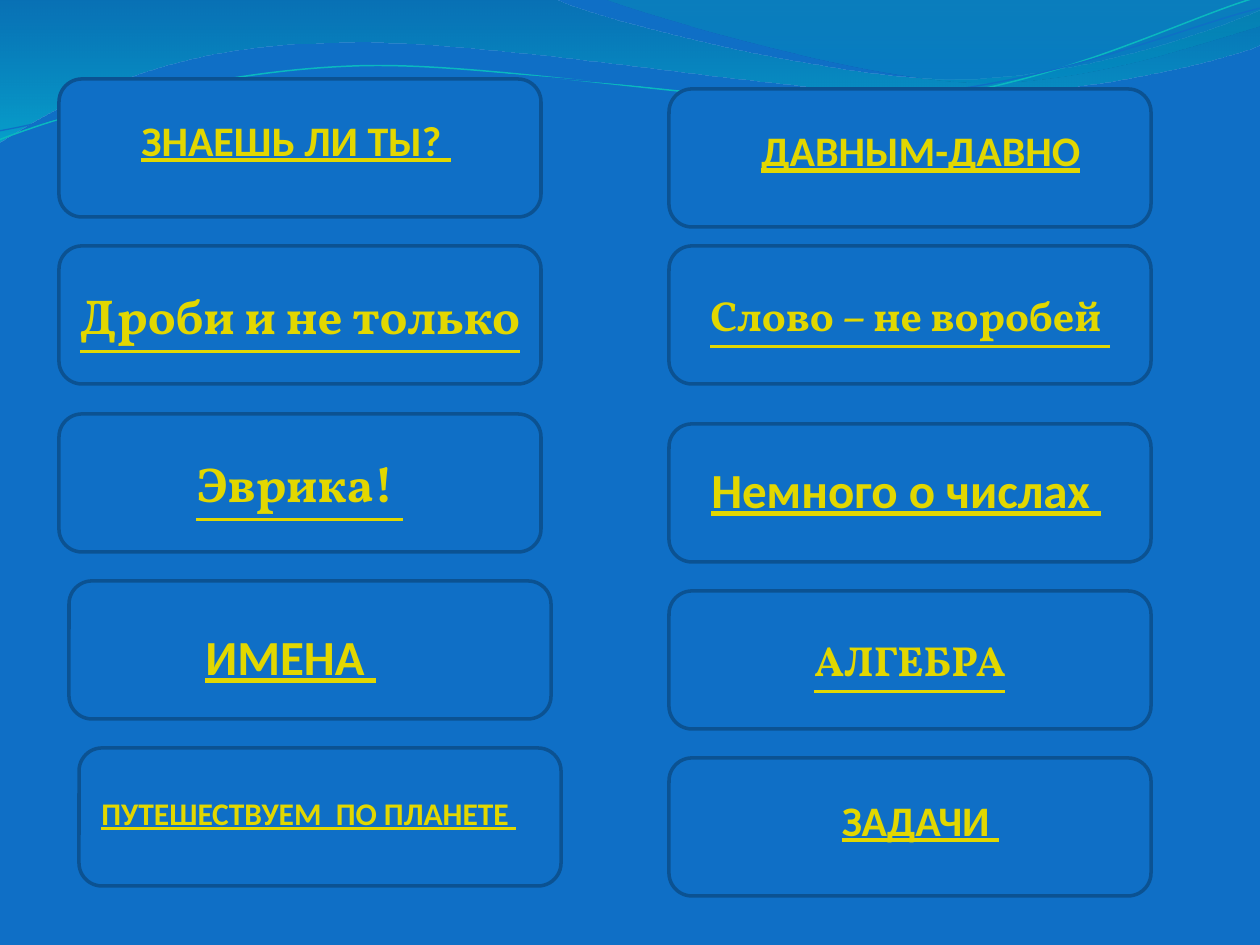
from lxml.etree import SubElement
from pptx import Presentation
from pptx.dml.color import RGBColor
from pptx.enum.shapes import MSO_SHAPE
from pptx.enum.text import MSO_ANCHOR, MSO_AUTO_SIZE, PP_ALIGN
from pptx.oxml.ns import qn
from pptx.util import Pt

SCALE = 914400 / 126  # EMU in one px
BLUE, EDGE, GOLD = "0F6FC6", "0B5292", "E2D700"
SERIF, SANS = "Vollkorn", "Calibri"
MID, LEFT = PP_ALIGN.CENTER, PP_ALIGN.LEFT
CARD = (482, 138)
TILT = 357.3

# Each route: a start, then pieces of one point (line) or three (curve)
WAVES = [
    ([[(0, 0)], [(554, -1)],
      [(600, 21), (837, 79), (955, 79)],
      [(1075, 79), (1207, 33), (1260, 11)],
      [(1261, 45)],
      [(1239, 55), (1096, 96), (940, 95)],
      [(784, 95), (481, 35), (324, 43)],
      [(163, 45), (58, 105), (-1, 142)],
      [(0, 0)]],
     [(0, "0074A1", 45), (1, "00C6CF", 55)]),
    ([[(604, -1)],
      [(641, 14), (859, 78), (969, 82)],
      [(1079, 87), (1211, 40), (1260, 26)],
      [(1260, 0)], [(604, -1)]],
     [(0, "00A1A9", 30), (0.8, "008BBF", 45)]),
]
LINES = [
    ([[(-3, 110)],
      [(58, 90), (200, 52), (350, 53)],
      [(496, 53), (745, 117), (896, 114)],
      [(1049, 109), (1184, 45), (1260, 27)]], "0AB8BF", 0.85),
    ([[(-2, 101)],
      [(57, 94), (207, 57), (358, 58)],
      [(509, 58), (750, 112), (902, 108)],
      [(1052, 104), (1188, 52), (1262, 38)]], BLUE, 0.75),
]

# Cards: left, top, then the words and size if the card holds them
CARDS = [
    (59, 79), (59, 246, "Дроби и не только ", 28),
    (59, 414, "Эврика! ", 28), (69, 581), (79, 748),
    (669, 89), (669, 246, "Слово – не воробей ", 24),
    (669, 424), (669, 591, "АЛГЕБРА", 24), (669, 758),
]
# Labels: box, words, size, side
LABELS = [
    ((129, 108, 344, 63), "ЗНАЕШЬ ЛИ ТЫ? ", 24, LEFT),
    ((749, 118, 354, 63), "ДАВНЫМ-ДАВНО", 24, LEFT),
    ((699, 453, 452, 72), "Немного о числах ", 28, LEFT),
    ((138, 620, 305, 72), "ИМЕНА ", 28, MID),
    ((89, 788, 444, 50), "ПУТЕШЕСТВУЕМ  ПО ПЛАНЕТЕ ", 18, LEFT),
    ((768, 788, 305, 63), "ЗАДАЧИ ", 24, MID),
]


def px(*nums):
    return [round(n * SCALE) for n in nums]


def tint(part, code):
    part.rgb = RGBColor.from_string(code)


def draw(slide, route, close):
    """Lay out every point, then join each three into a cubic curve."""
    dots = [px(*dot) for piece in route for dot in piece]
    pen = slide.shapes.build_freeform(*dots[0])
    pen.add_line_segments(dots[1:], close=close)
    shape = pen.convert_to_shape()
    shape.shadow.inherit = False
    nodes = iter(list(shape.element.iter(qn("a:lnTo"))))
    for piece in route[1:]:
        node = next(nodes)
        if len(piece) == 3:
            curve = node.makeelement(qn("a:cubicBezTo"))
            node.addprevious(curve)
            for part in (node, next(nodes), next(nodes)):
                curve.append(part[0])
                part.getparent().remove(part)
    return shape


def add_waves(slide):
    # Sheer bands
    for route, stops in WAVES:
        band = draw(slide, route, True)
        band.line.fill.background()
        band.fill.gradient()
        band.fill.gradient_angle = 270
        for stop, (place, code, _) in zip(band.fill.gradient_stops, stops):
            stop.position = place
            tint(stop.color, code)
        for node, (_, _, alpha) in zip(band.element.iter(qn("a:srgbClr")), stops):
            SubElement(node, qn("a:alpha"), val=str(alpha * 1000))
    # Thin lines
    for route, code, width in LINES:
        line = draw(slide, route, False)
        line.rotation = TILT
        line.fill.background()
        tint(line.line.color, code)
        line.line.width = Pt(width)


def write(shape, words, size, face, side):
    frame = shape.text_frame
    frame.word_wrap = True
    frame.vertical_anchor = MSO_ANCHOR.MIDDLE
    para = frame.paragraphs[0]
    para.text = words
    para.alignment = side
    font = para.font
    font.name, font.size = face, Pt(size)
    font.bold = font.underline = True
    tint(font.color, GOLD)


def add_card(slide, left, top, words="", size=24):
    card = slide.shapes.add_shape(MSO_SHAPE.ROUNDED_RECTANGLE, *px(left, top, *CARD))
    card.shadow.inherit = False
    card.fill.solid()
    tint(card.fill.fore_color, BLUE)
    tint(card.line.color, EDGE)
    card.line.width = Pt(2)
    if words:
        write(card, words, size, SERIF, MID)


def add_label(slide, box, words, size, side):
    label = slide.shapes.add_textbox(*px(*box))
    write(label, words, size, SANS, side)
    label.text_frame.auto_size = MSO_AUTO_SIZE.SHAPE_TO_FIT_TEXT


def main():
    deck = Presentation()
    deck.slide_width, deck.slide_height = px(1260, 945)
    slide = deck.slides.add_slide(deck.slide_layouts[6])
    slide.background.fill.solid()
    tint(slide.background.fill.fore_color, BLUE)
    add_waves(slide)
    for card in CARDS:
        add_card(slide, *card)
    for label in LABELS:
        add_label(slide, *label)
    deck.save("out.pptx")


if __name__ == "__main__":
    main()
